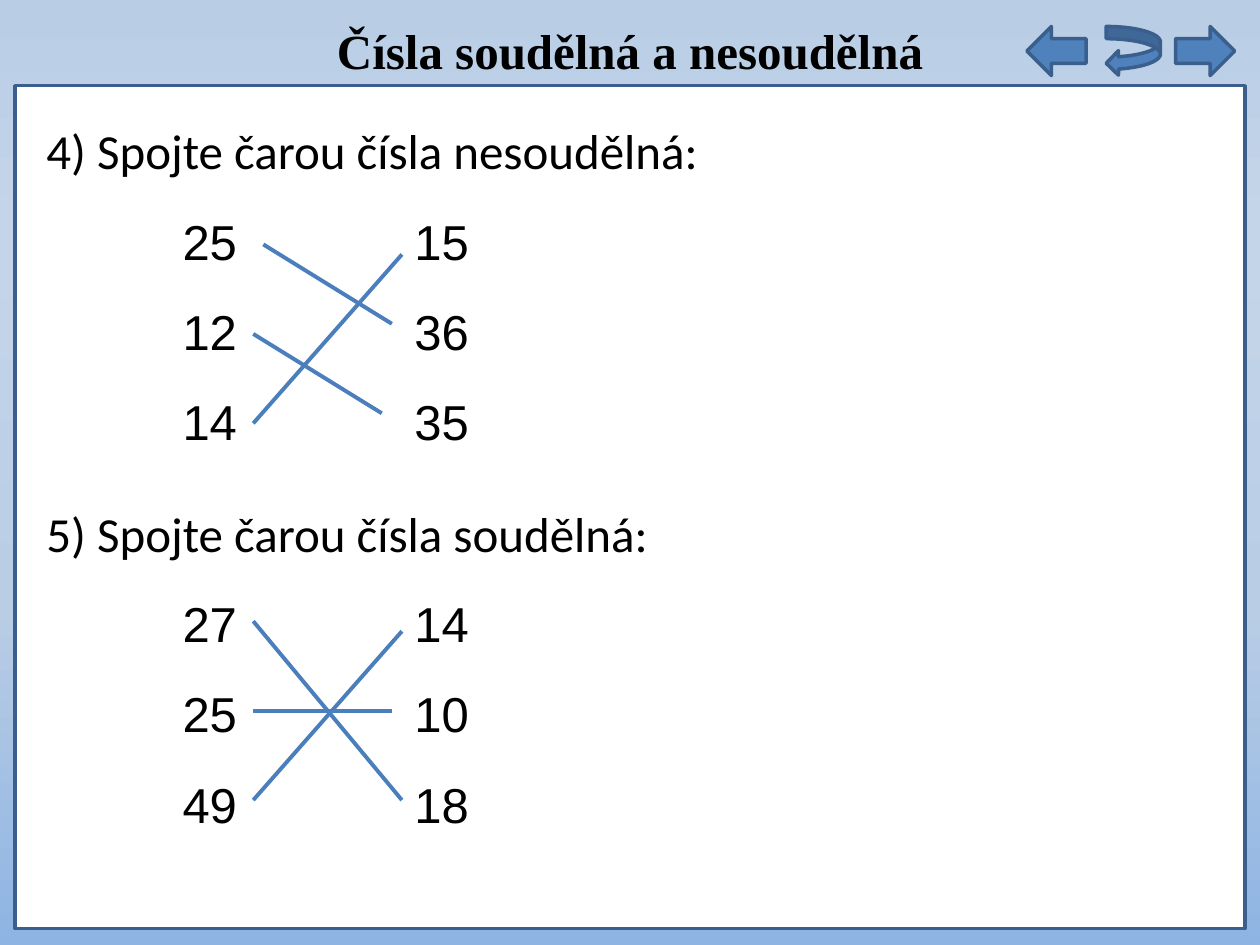
from dataclasses import dataclass

from lxml import etree
from pptx import Presentation
from pptx.dml.color import RGBColor
from pptx.enum.shapes import MSO_CONNECTOR, MSO_SHAPE
from pptx.enum.text import MSO_AUTO_SIZE, PP_ALIGN
from pptx.oxml.ns import qn
from pptx.util import Inches, Pt

RECTANGLE = MSO_SHAPE.RECTANGLE
RIGHT_ARROW = MSO_SHAPE.RIGHT_ARROW
CURVED_ARROW = MSO_SHAPE.CURVED_LEFT_ARROW
STRAIGHT = MSO_CONNECTOR.STRAIGHT
CENTER = PP_ALIGN.CENTER
GROW = MSO_AUTO_SIZE.SHAPE_TO_FIT_TEXT


@dataclass(frozen=True)
class Theme:
    ink: str = "000000"
    panel: str = "FFFFFF"
    button: str = "4F81BD"
    outline: str = "3A5F8C"
    match_line: str = "4B7EBC"
    sky: tuple = ((0, "B9CDE5"), (25, "C5D5E9"), (64, "B9CDE5"), (100, "8EB4E3"))
    title_font: str = "Times New Roman"
    task_font: str = "Calibri"
    number_font: str = "Arial"
    text_size: int = 28
    outline_width: float = 2
    match_width: float = 2.25


THEME = Theme()
NUMBER_STOPS = (1.08, 2.92)  # tab stops of the two number columns

# Task, space before it, and its rows of numbers
EXERCISES = (
    ("4) Spojte čarou čísla nesoudělná:", 0, ((25, 15), (12, 36), (14, 35))),
    ("5) Spojte čarou čísla soudělná:", 12, ((27, 14), (25, 10), (49, 18))),
)
# Start and end of each answer line
MATCHES = (
    (2.09, 1.94, 3.11, 2.57),
    (2.01, 2.65, 3.03, 3.28),
    (2.01, 3.36, 3.19, 2.02),
    (2.01, 4.93, 3.19, 6.35),
    (2.01, 5.64, 3.11, 5.64),
    (2.01, 6.35, 3.19, 5.01),
)


def color(value):
    return RGBColor.from_string(value)


def paint_background(page):
    fill = page.background.fill
    fill.gradient()
    fill.gradient_angle = 270
    stops = next(page.element.iter(qn("a:gsLst")))
    for stop in list(stops):
        stops.remove(stop)
    for percent, value in THEME.sky:
        stop = etree.SubElement(stops, qn("a:gs"), pos=str(percent * 1000))
        etree.SubElement(stop, qn("a:srgbClr"), val=value)


def add_block(page, kind, left, top, width, height, fill, mirrored=False):
    shape = page.shapes.add_shape(
        kind, Inches(left), Inches(top), Inches(width), Inches(height))
    shape.shadow.inherit = False
    shape.fill.solid()
    shape.fill.fore_color.rgb = color(fill)
    shape.line.color.rgb = color(THEME.outline)
    shape.line.width = Pt(THEME.outline_width)
    if mirrored:
        next(shape.element.iter(qn("a:xfrm"))).set("flipH", "1")


def add_text_box(page, left, top, width, height):
    box = page.shapes.add_textbox(
        Inches(left), Inches(top), Inches(width), Inches(height))
    box.text_frame.word_wrap = True
    box.text_frame.auto_size = GROW
    return box.text_frame


def add_span(para, text, font, bold=False):
    span = para.add_run()
    span.text = text
    span.font.name = font
    span.font.size = Pt(THEME.text_size)
    span.font.bold = bold
    span.font.color.rgb = color(THEME.ink)


def set_tab_stops(para, positions):
    tabs = etree.SubElement(para._p.get_or_add_pPr(), qn("a:tabLst"))
    for position in positions:
        etree.SubElement(tabs, qn("a:tab"), pos=str(Inches(position)), algn="l")


def add_exercises(frame):
    para = frame.paragraphs[0]
    for task, space_before, rows in EXERCISES:
        if para is None:
            para = frame.add_paragraph()
        para.space_before = Pt(space_before)
        para.space_after = Pt(18)
        add_span(para, task, THEME.task_font)
        for left_number, right_number in rows:
            para = frame.add_paragraph()
            para.space_after = Pt(18)
            set_tab_stops(para, NUMBER_STOPS)
            add_span(para, f"\t{left_number}\t{right_number}", THEME.number_font)
        para = None


def add_match(page, *ends):
    line = page.shapes.add_connector(STRAIGHT, *(Inches(end) for end in ends))
    line.line.color.rgb = color(THEME.match_line)
    line.line.width = Pt(THEME.match_width)
    etree.SubElement(line.element.find(qn("p:spPr")), qn("a:effectLst"))


def main():
    deck = Presentation()
    deck.slide_width, deck.slide_height = Inches(10), Inches(7.5)
    page = deck.slides.add_slide(deck.slide_layouts[6])

    # Background, white panel and straight navigation arrows
    paint_background(page)
    add_block(page, RECTANGLE, 0.12, 0.68, 9.76, 6.69, THEME.panel)
    add_block(page, RIGHT_ARROW, 9.33, 0.21, 0.47, 0.39, THEME.button)
    add_block(page, RIGHT_ARROW, 8.15, 0.21, 0.47, 0.39, THEME.button, mirrored=True)

    # Title and return arrow
    title = add_text_box(page, 0.12, 0.11, 9.76, 0.57).paragraphs[0]
    title.alignment = CENTER
    add_span(title, "Čísla soudělná a nesoudělná", THEME.title_font, bold=True)
    add_block(page, CURVED_ARROW, 8.78, 0.21, 0.43, 0.39, THEME.button)

    # Exercises and their answer lines
    add_exercises(add_text_box(page, 0.27, 0.91, 9.29, 5.81))
    for match in MATCHES:
        add_match(page, *match)

    deck.save("out.pptx")


if __name__ == "__main__":
    main()
